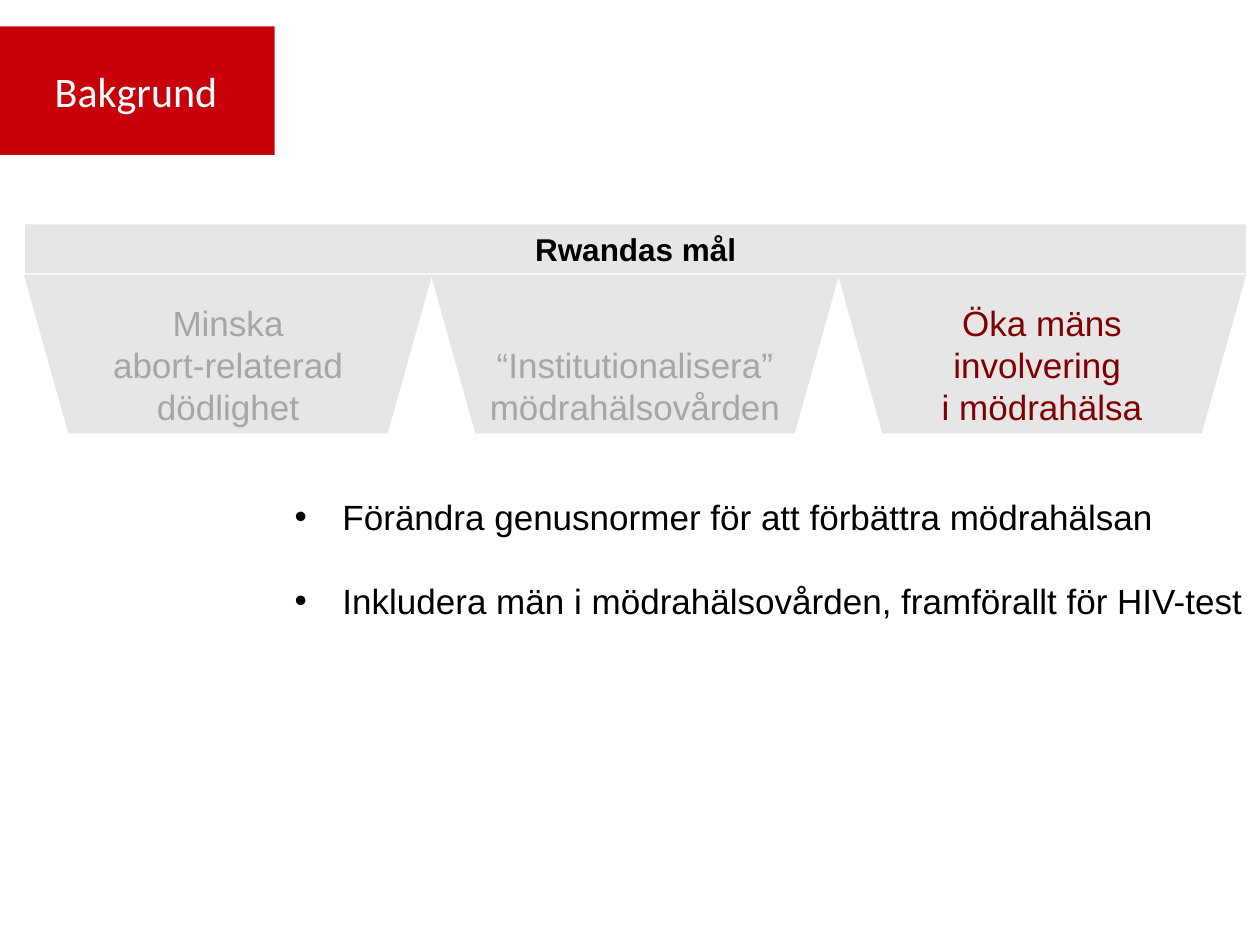
"""Build the Bakgrund slide on Rwanda's maternal health goals."""
from lxml import etree
from pptx import Presentation
from pptx.dml.color import RGBColor
from pptx.enum import shapes, text
from pptx.oxml.ns import qn
from pptx.util import Inches, Pt

RED = RGBColor(0xC8, 0x00, 0x0A)
PANEL = RGBColor(0xE6, 0xE6, 0xE6)
MUTED = RGBColor(0xA6, 0xA6, 0xA6)
ACCENT = RGBColor(0x80, 0x00, 0x00)
BLACK = RGBColor(0, 0, 0)
WHITE = RGBColor(0xFF, 0xFF, 0xFF)

TITLE = "Bakgrund"
HEADING = "Rwandas mål"
GOALS = [
    (["Minska", "abort-relaterad dödlighet"], MUTED),
    (["“Institutionalisera” mödrahälsovården"], MUTED),
    (["Öka mäns", "involvering ", "i mödrahälsa"], ACCENT),
]
BULLETS = [
    "Förändra genusnormer för att förbättra mödrahälsan",
    "Inkludera män i mödrahälsovården, framförallt för HIV-test",
]

GOAL_LEFT, GOAL_TOP, GOAL_W, GOAL_H = 0.19, 2.18, 3.24, 1.26
GOAL_STEP, TEXT_INSET, INDENT = 3.23, 0.16, 0.38


def add_block(s, kind, box, color):
    sp = s.shapes.add_shape(kind, *map(Inches, box))
    sp.shadow.inherit = False
    sp.fill.solid()
    sp.fill.fore_color.rgb = color
    sp.line.fill.background()
    return sp


def write(sp, lines, size, color, font="Arial", bold=False,
          align=text.PP_ALIGN.CENTER, anchor=text.MSO_ANCHOR.TOP):
    tf = sp.text_frame
    tf.word_wrap = True
    tf.vertical_anchor = anchor
    for i, line in enumerate(lines):
        p = tf.add_paragraph() if i else tf.paragraphs[0]
        p.alignment = align
        r = p.add_run()
        r.text = line
        r.font.size = Pt(size)
        r.font.name = font
        r.font.bold = bold
        r.font.color.rgb = color
    return tf


def add_bullet(p):
    pPr = p._p.get_or_add_pPr()
    pPr.set("marL", str(Inches(INDENT)))
    pPr.set("indent", str(-Inches(INDENT)))
    etree.SubElement(pPr, qn("a:buFont")).set("typeface", "Arial")
    etree.SubElement(pPr, qn("a:buChar")).set("char", "•")


def main():
    prs = Presentation()
    prs.slide_width, prs.slide_height = Inches(10), Inches(7.5)
    s = prs.slides.add_slide(prs.slide_layouts[6])
    rect = shapes.MSO_SHAPE.RECTANGLE

    heading = add_block(s, rect, (0.2, 1.78, 9.69, 0.39), PANEL)
    write(heading, [HEADING], 18, BLACK, bold=True)

    title = add_block(s, rect, (-0.02, 0.21, 2.2, 1.02), RED)
    write(title, [TITLE], 24, WHITE, "Calibri", anchor=text.MSO_ANCHOR.MIDDLE)

    for i, (lines, color) in enumerate(GOALS):
        left = GOAL_LEFT + i * GOAL_STEP
        goal = add_block(s, shapes.MSO_SHAPE.TRAPEZOID,
                         (left, GOAL_TOP, GOAL_W, GOAL_H), PANEL)
        goal.adjustments[0] = 0.28
        goal.rotation = 180
        label = s.shapes.add_textbox(
            Inches(left + TEXT_INSET), Inches(GOAL_TOP),
            Inches(GOAL_W - 2 * TEXT_INSET), Inches(GOAL_H))
        write(label, lines, 20, color, anchor=text.MSO_ANCHOR.BOTTOM)

    body = s.shapes.add_textbox(Inches(2.24), Inches(3.88), Inches(8.03), Inches(1.11))
    tf = write(body, BULLETS, 20, BLACK, align=text.PP_ALIGN.LEFT)
    for p in tf.paragraphs:
        add_bullet(p)
    for p in tf.paragraphs[1:]:
        p.space_before = Pt(24)

    prs.save("out.pptx")


if __name__ == "__main__":
    main()
